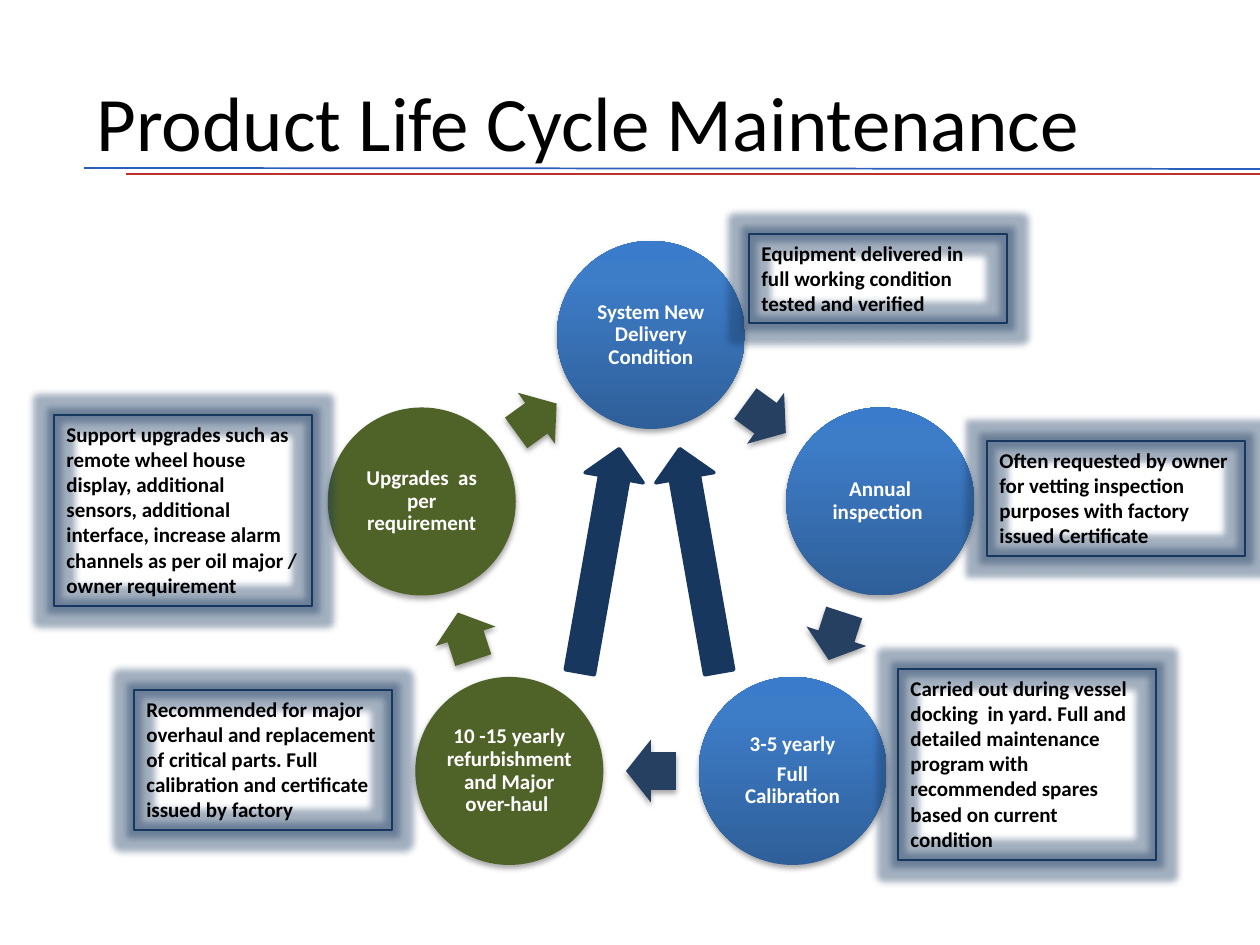
import copy
import math
from dataclasses import dataclass

import pptx
import pptx.util
import pptx.dml.color
import pptx.enum.shapes
import pptx.enum.text
import pptx.oxml
import pptx.oxml.ns

SHAPE = pptx.enum.shapes.MSO_SHAPE
ALIGN = pptx.enum.text.PP_ALIGN
ANCHOR = pptx.enum.text.MSO_ANCHOR
EMU_PER_PX = 914400 / 126


@dataclass(frozen=True)
class Theme:
    font: str = "Calibri"
    title_size: int = 44
    body_size: int = 12
    black: str = "000000"
    white: str = "FFFFFF"
    navy: str = "17375E"
    slate: str = "254061"
    green: str = "4F6228"
    rule_blue: str = "2B5FBD"
    rule_red: str = "BD302C"
    blue_stops: tuple = ((0, "2F5F99"), (0.8, "3D7CC7"), (1, "3A7CCB"))


@dataclass(frozen=True)
class Stage:
    paragraphs: tuple
    upgrade: bool
    arrow_color: str


@dataclass(frozen=True)
class Callout:
    text: str
    left: int
    top: int
    height: int


THEME = Theme()
CENTER_X, CENTER_Y, RING_RADIUS = 651, 576, 241
CIRCLE = 188
ARROW_WIDTH, ARROW_HEIGHT = 50, 63
CALLOUT_WIDTH = 258

STAGES = (
    Stage(("System New Delivery Condition",), False, THEME.slate),
    Stage(("Annual inspection ",), False, THEME.slate),
    Stage(("3-5 yearly", "Full Calibration"), False, THEME.slate),
    Stage(("10 -15 yearly refurbishment and Major over-haul ",), True, THEME.green),
    Stage(("Upgrades  as per requirement",), True, THEME.green),
)

CALLOUTS = (
    Callout("Equipment delivered in full working condition tested and verified", 749, 234, 89),
    Callout("Often requested by owner for vetting inspection purposes with factory "
            "issued Certificate", 987, 441, 115),
    Callout("Carried out during vessel docking  in yard. Full and detailed maintenance "
            "program with recommended spares based on current condition", 898, 669, 191),
    Callout("Recommended for major overhaul and replacement of critical parts. Full "
            "calibration and certificate issued by factory", 134, 690, 140),
    Callout("Support upgrades such as remote wheel house display, additional sensors, "
            "additional interface, increase alarm channels as per oil major / owner "
            "requirement", 54, 415, 191),
)


def px(value: float) -> int:
    return round(value * EMU_PER_PX)


def rgb(color: str):
    return pptx.dml.color.RGBColor.from_string(color)


def write_text(sp, *paragraphs: str, size=THEME.body_size, color=THEME.black, bold=True,
               align=ALIGN.LEFT, anchor=ANCHOR.TOP, spacing=None, after=None, inset=None) -> None:
    tf = sp.text_frame
    tf.word_wrap = True
    tf.vertical_anchor = anchor
    if inset is not None:
        tf.margin_left = tf.margin_right = tf.margin_top = tf.margin_bottom = px(inset)
    for i, text in enumerate(paragraphs):
        p = tf.add_paragraph() if i else tf.paragraphs[0]
        p.alignment = align
        p.line_spacing = spacing
        p.space_after = None if after is None else pptx.util.Pt(after)
        r = p.add_run()
        r.text = text
        r.font.name = THEME.font
        r.font.size = pptx.util.Pt(size)
        r.font.bold = bold
        r.font.color.rgb = rgb(color)


def add_effect(sp, effect: str) -> None:
    effects = sp._element.spPr.find(pptx.oxml.ns.qn("a:effectLst"))
    effects.append(pptx.oxml.parse_xml(effect))


def add_shadow(sp) -> None:
    add_effect(sp, f'<a:outerShdw {pptx.oxml.ns.nsdecls("a")} blurRad="40000" dist="23000" '
                   f'dir="5400000" rotWithShape="0"><a:srgbClr val="{THEME.black}">'
                   '<a:alpha val="35000"/></a:srgbClr></a:outerShdw>')


def add_glow(sp) -> None:
    add_effect(sp, f'<a:glow {pptx.oxml.ns.nsdecls("a")} rad="101600">'
                   f'<a:srgbClr val="{THEME.navy}"><a:alpha val="40000"/></a:srgbClr></a:glow>')


def add_figure(s, kind, left: float, top: float, width: float, height: float,
               fill=None, line=None, weight=1, rotation=0):
    sp = s.shapes.add_shape(kind, px(left), px(top), px(width), px(height))
    sp.rotation = rotation
    sp.shadow.inherit = False
    if fill:
        sp.fill.solid()
        sp.fill.fore_color.rgb = rgb(fill)
    else:
        sp.fill.background()
    if line:
        sp.line.color.rgb = rgb(line)
        sp.line.width = pptx.util.Pt(weight)
    else:
        sp.line.fill.background()
    return sp


def fill_gradient(sp) -> None:
    sp.fill.gradient()
    sp.fill.gradient_angle = 90
    stops = sp._element.spPr.find(".//" + pptx.oxml.ns.qn("a:gsLst"))
    stops.append(copy.deepcopy(stops[0]))
    for stop, (position, color) in zip(sp.fill.gradient_stops, THEME.blue_stops):
        stop.position = position
        stop.color.rgb = rgb(color)


def add_rule(s, left: int, top: int, right: int, bottom: int, color: str) -> None:
    line = s.shapes.add_connector(pptx.enum.shapes.MSO_CONNECTOR.STRAIGHT,
                                  px(left), px(top), px(right), px(bottom))
    line.line.color.rgb = rgb(color)
    line.line.width = pptx.util.Pt(1)
    line._element.spPr.append(pptx.oxml.parse_xml(
        f'<a:effectLst {pptx.oxml.ns.nsdecls("a")}/>'))


def add_stage(s, index: int, stage: Stage) -> None:
    step = 2 * math.pi / len(STAGES)
    angle = index * step
    x = CENTER_X + RING_RADIUS * math.sin(angle)
    y = CENTER_Y - RING_RADIUS * math.cos(angle)
    circle = add_figure(s, SHAPE.OVAL, x - CIRCLE / 2, y - CIRCLE / 2, CIRCLE, CIRCLE, THEME.green)
    if not stage.upgrade:
        fill_gradient(circle)
    add_shadow(circle)
    write_text(circle, *stage.paragraphs, color=THEME.white, align=ALIGN.CENTER,
               anchor=ANCHOR.MIDDLE, spacing=0.9, after=4, inset=2)

    middle = angle + step / 2
    reach = RING_RADIUS * math.cos(step / 2)
    arrow = add_figure(s, SHAPE.RIGHT_ARROW,
                       CENTER_X + reach * math.sin(middle) - ARROW_WIDTH / 2,
                       CENTER_Y - reach * math.cos(middle) - ARROW_HEIGHT / 2,
                       ARROW_WIDTH, ARROW_HEIGHT, stage.arrow_color,
                       rotation=math.degrees(middle))
    arrow.adjustments[0] = 0.6
    arrow.adjustments[1] = 0.5
    add_shadow(arrow)


def add_callout(s, note: Callout) -> None:
    box = add_figure(s, SHAPE.RECTANGLE, note.left, note.top, CALLOUT_WIDTH, note.height,
                     line=THEME.navy)
    add_glow(box)
    write_text(box, note.text)
    box.text_frame.auto_size = pptx.enum.text.MSO_AUTO_SIZE.SHAPE_TO_FIT_TEXT


def main() -> None:
    prs = pptx.Presentation()
    prs.slide_width, prs.slide_height = px(1260), px(945)
    s = prs.slides.add_slide(prs.slide_layouts[5])
    title = s.shapes.title
    title.left, title.top, title.width, title.height = px(84), px(42), px(1040), px(157)
    write_text(title, "Product Life Cycle Maintenance", size=THEME.title_size, bold=False,
               anchor=ANCHOR.MIDDLE)
    add_rule(s, 84, 168, 1260, 169, THEME.rule_blue)
    add_rule(s, 126, 174, 1260, 174, THEME.rule_red)
    for index, stage in enumerate(STAGES):
        add_stage(s, index, stage)
    for left, rotation in ((570, 10), (670, -10)):
        add_figure(s, SHAPE.UP_ARROW, left, 447, 59, 227, THEME.navy, THEME.navy, 2, rotation)
    for note in CALLOUTS:
        add_callout(s, note)
    prs.save("out.pptx")


if __name__ == "__main__":
    main()
